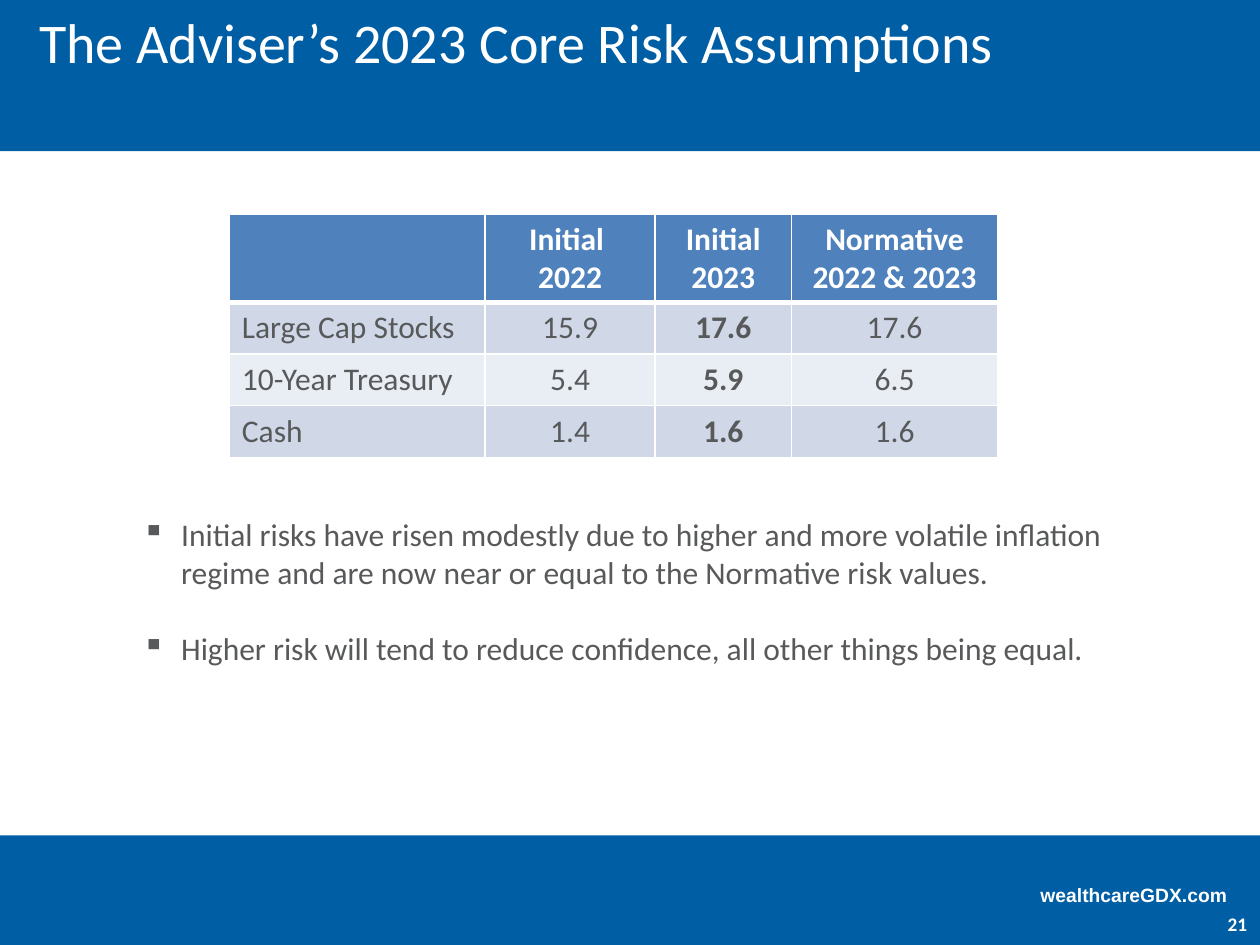
import pptx
import pptx.chart.data
import pptx.dml.color
import pptx.enum.shapes
import pptx.enum.text
import pptx.oxml
import pptx.oxml.ns
import pptx.util

Inches = pptx.util.Inches
Pt = pptx.util.Pt
ALIGN = pptx.enum.text.PP_ALIGN
ANCHOR = pptx.enum.text.MSO_ANCHOR

COLORS = {
    "band": "005EA4",
    "white": "FFFFFF",
    "header": "4F81BD",
    "row_dark": "D0D8E8",
    "row_light": "E9EDF4",
    "text": "58595B",
}

TITLE = "The Adviser’s 2023 Core Risk Assumptions"
SITE = "wealthcareGDX.com"
PAGE_NUMBER = "21"
RISKS = [
    [[], ["Initial ", "2022"], ["Initial", "2023"], ["Normative 2022 & 2023"]],
    [["Large Cap Stocks"], ["15.9"], ["17.6"], ["17.6"]],
    [["10-Year Treasury"], ["5.4"], ["5.9"], ["6.5"]],
    [["Cash"], ["1.4"], ["1.6"], ["1.6"]],
]
COLUMN_WIDTHS = [2.03, 1.35, 1.08, 1.64]
HEADER_HEIGHT, ROW_HEIGHT = 0.7, 0.41
EMPHASIS_COLUMN = 2
BULLETS = [
    "Initial risks have risen modestly due to higher and more volatile inflation "
    "regime and are now near or equal to the Normative risk values.",
    "Higher risk will tend to reduce confidence, all other things being equal.",
]
BANDS = [(0, 1.2), (6.63, 0.87)]


def color(name):
    return pptx.dml.color.RGBColor.from_string(COLORS[name])


def write(frame, lines, size=18, font="Calibri", fill="text", bold=False,
          align=ALIGN.LEFT, bullet=None, indent=0.31, gap=0):
    for index, line in enumerate(lines):
        paragraph = frame.paragraphs[0] if index == 0 else frame.add_paragraph()
        paragraph.text = line
        paragraph.alignment = align
        if index and gap:
            paragraph.space_before = Pt(gap)
        if bullet:
            properties = paragraph._p.get_or_add_pPr()
            properties.set("marL", str(Inches(indent)))
            properties.set("indent", str(-Inches(indent)))
            mark = pptx.oxml.parse_xml(
                f'<a:buChar {pptx.oxml.ns.nsdecls("a")} char="{bullet}"/>')
            properties.append(mark)
        paragraph.font.size = Pt(size)
        paragraph.font.name = font
        paragraph.font.bold = bold
        paragraph.font.color.rgb = color(fill)


def add_text(slide, box, lines, wrap=True, inset=None, **style):
    shape = slide.shapes.add_textbox(*map(Inches, box))
    frame = shape.text_frame
    frame.word_wrap = wrap
    if inset is not None:
        frame.margin_left = frame.margin_right = Inches(inset)
        frame.margin_top = frame.margin_bottom = Inches(inset)
    write(frame, lines, **style)


def add_borders(cell, widths):
    properties = cell._tc.get_or_add_tcPr()
    for side in "LRTB":
        properties.append(pptx.oxml.parse_xml(
            f'<a:ln{side} {pptx.oxml.ns.nsdecls("a")} w="{Pt(widths.get(side, 1))}">'
            f'<a:solidFill><a:srgbClr val="{COLORS["white"]}"/></a:solidFill></a:ln{side}>'))


def add_risk_table(slide):
    heights = [HEADER_HEIGHT] + [ROW_HEIGHT] * (len(RISKS) - 1)
    table = slide.shapes.add_table(
        len(RISKS), len(COLUMN_WIDTHS), Inches(1.82), Inches(1.7),
        Inches(sum(COLUMN_WIDTHS)), Inches(sum(heights))).table
    for column, width in zip(table.columns, COLUMN_WIDTHS):
        column.width = Inches(width)
    for row, height in zip(table.rows, heights):
        row.height = Inches(height)
    for row_index, row in enumerate(RISKS):
        is_header = row_index == 0
        row_fill = "header" if is_header else ("row_light", "row_dark")[row_index % 2]
        border_widths = {0: {"B": 3}, 1: {"T": 3}}.get(row_index, {})
        for column_index, lines in enumerate(row):
            cell = table.cell(row_index, column_index)
            add_borders(cell, border_widths)
            cell.fill.solid()
            cell.fill.fore_color.rgb = color(row_fill)
            write(cell.text_frame, lines,
                  fill="white" if is_header else "text",
                  bold=is_header or column_index == EMPHASIS_COLUMN,
                  align=ALIGN.CENTER if column_index else ALIGN.LEFT)


def main():
    presentation = pptx.Presentation()
    presentation.slide_width = Inches(10)
    presentation.slide_height = Inches(7.5)
    slide = presentation.slides.add_slide(presentation.slide_layouts[5])

    for top, height in BANDS:
        band = slide.shapes.add_shape(
            pptx.enum.shapes.MSO_SHAPE.RECTANGLE,
            0, Inches(top), presentation.slide_width, Inches(height))
        band.shadow.inherit = False
        band.fill.solid()
        band.fill.fore_color.rgb = color("band")
        band.line.fill.background()

    title = slide.shapes.title
    title.element.getparent().append(title.element)
    title.left, title.top = Inches(0.21), Inches(0)
    title.width, title.height = Inches(9.79), Inches(1.2)
    title.text_frame.vertical_anchor = ANCHOR.TOP
    title.text_frame.margin_top = Inches(0.06)
    write(title.text_frame, [TITLE], size=32, fill="white")

    add_text(slide, (8.16, 6.96, 1.7, 0.29), [SITE], wrap=False,
             size=11, font="Arial", fill="white", bold=True)
    add_text(slide, (9.64, 7.24, 0.36, 0.2), [PAGE_NUMBER], inset=0,
             size=11, fill="white", bold=True, align=ALIGN.CENTER)
    add_risk_table(slide)
    add_text(slide, (1.03, 4.04, 7.94, 1.62), BULLETS, bullet="▪", gap=22)
    presentation.save("out.pptx")


if __name__ == "__main__":
    main()
